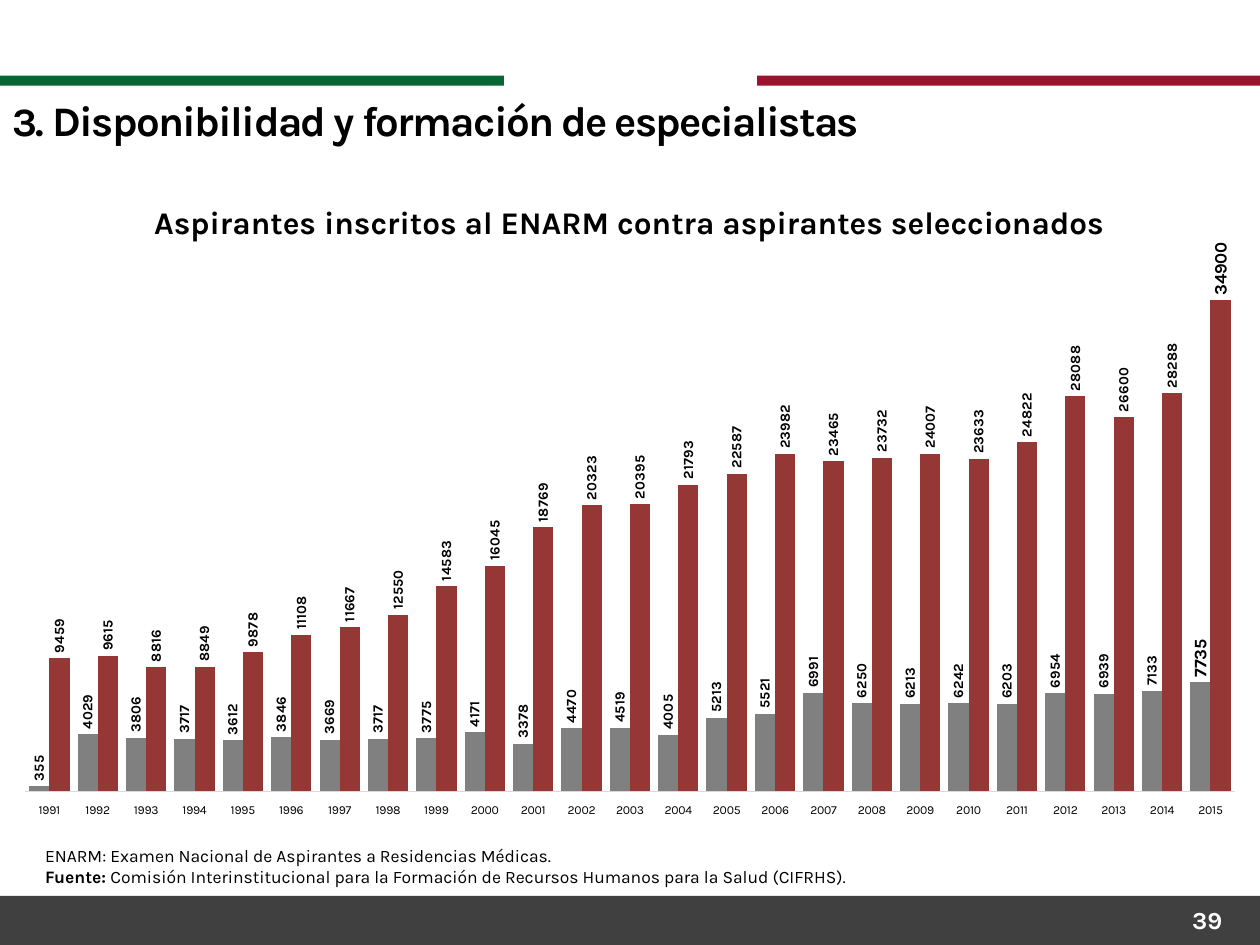
from lxml.etree import SubElement
from pptx import Presentation
from pptx.chart.data import CategoryChartData
from pptx.dml.color import RGBColor
from pptx.enum.chart import XL_CHART_TYPE, XL_LABEL_POSITION, XL_TICK_LABEL_POSITION, XL_TICK_MARK
from pptx.enum.shapes import MSO_SHAPE
from pptx.enum.text import MSO_ANCHOR, PP_ALIGN
from pptx.oxml.ns import qn
from pptx.util import Inches, Pt

BLACK = RGBColor(0x00, 0x00, 0x00)
WHITE = RGBColor(0xFF, 0xFF, 0xFF)
FOOTER_GRAY = RGBColor(0x40, 0x40, 0x40)
GREEN = RGBColor(0x07, 0x66, 0x32)
CRIMSON = RGBColor(0x9B, 0x12, 0x2D)
BAR_GRAY = RGBColor(0x80, 0x80, 0x80)
BAR_RED = RGBColor(0x95, 0x37, 0x35)
AXIS_GRAY = RGBColor(0xD9, 0xD9, 0xD9)

COLUMNS, ROWS = 100, 75
YEARS = range(1991, 2016)
SELECTED = [355, 4029, 3806, 3717, 3612, 3846, 3669, 3717, 3775, 4171, 3378, 4470, 4519,
            4005, 5213, 5521, 6991, 6250, 6213, 6242, 6203, 6954, 6939, 7133, 7735]
REGISTERED = [9459, 9615, 8816, 8849, 9878, 11108, 11667, 12550, 14583, 16045, 18769,
              20323, 20395, 21793, 22587, 23982, 23465, 23732, 24007, 23633, 24822,
              28088, 26600, 28288, 34900]


def set_attributes(obj, values):
    for name, value in values.items():
        setattr(obj, name, value)


class SlideBuilder:
    """Draws on one slide; places are (column, row, columns, rows) of the grid."""

    font_name = "Karla"

    def __init__(self, prs):
        self.slide = prs.slides.add_slide(prs.slide_layouts[6])
        self.column = prs.slide_width / COLUMNS
        self.row = prs.slide_height / ROWS

    def place(self, x, y, w, h):
        return (int(x * self.column), int(y * self.row),
                int(w * self.column), int(h * self.row))

    def style(self, font, size, bold=False, color=BLACK):
        set_attributes(font, {"name": self.font_name, "size": Pt(size), "bold": bold})
        font.color.rgb = color

    def bar(self, at, color):
        sp = self.slide.shapes.add_shape(MSO_SHAPE.RECTANGLE, *self.place(*at))
        sp.shadow.inherit = False
        sp.fill.solid()
        sp.fill.fore_color.rgb = color
        sp.line.fill.background()

    def text(self, at, paragraphs, align=PP_ALIGN.LEFT, color=BLACK, tracking=None):
        """Each paragraph is a list of (text, size, bold) runs."""
        tf = self.slide.shapes.add_textbox(*self.place(*at)).text_frame
        set_attributes(tf, {"word_wrap": True, "vertical_anchor": MSO_ANCHOR.TOP})
        for i, runs in enumerate(paragraphs):
            p = tf.paragraphs[0] if i == 0 else tf.add_paragraph()
            p.alignment = align
            for words, size, bold in runs:
                r = p.add_run()
                r.text = words
                self.style(r.font, size, bold, color)
                if tracking is not None:
                    r.font._element.set("spc", str(tracking))

    def column_chart(self, at, categories, series):
        """Each series is (name, values, color); the last point has a larger label."""
        data = CategoryChartData()
        data.categories = [str(c) for c in categories]
        for name, values, _ in series:
            data.add_series(name, values)
        chart = self.slide.shapes.add_chart(
            XL_CHART_TYPE.COLUMN_CLUSTERED, *self.place(*at), data).chart
        set_attributes(chart, {"has_legend": False, "has_title": False})
        self.style(chart.font, 8)

        plot = chart.plots[0]
        set_attributes(plot, {"gap_width": 40, "overlap": 0, "vary_by_categories": False})
        for ser, (_, values, color) in zip(plot.series, series):
            ser.format.fill.solid()
            ser.format.fill.fore_color.rgb = color
            labels = ser.data_labels
            last = ser.points[len(values) - 1].data_label
            self.style(last.font, 10, True)
            self.style(labels.font, 8, True)
            labels.show_value = True
            labels.position = last.position = XL_LABEL_POSITION.OUTSIDE_END
        for body in chart._chartSpace.xpath(".//c:dLbls//a:bodyPr"):
            body.set("rot", "-5400000")
            body.set("vert", "horz")

        self.chart_axes(chart)
        self.plot_layout(chart, {"x": 0.02, "y": 0.02, "w": 0.96, "h": 0.93})

    def chart_axes(self, chart):
        set_attributes(chart.value_axis, {
            "visible": False, "has_major_gridlines": False,
            "minimum_scale": 0, "maximum_scale": 40000})
        axis = chart.category_axis
        set_attributes(axis, {
            "major_tick_mark": XL_TICK_MARK.NONE, "minor_tick_mark": XL_TICK_MARK.NONE,
            "tick_label_position": XL_TICK_LABEL_POSITION.LOW})
        self.style(axis.tick_labels.font, 7)
        axis.format.line.color.rgb = AXIS_GRAY
        axis.format.line.width = Pt(0.75)

    def plot_layout(self, chart, shares):
        """Fix the inner plot area, given as shares of the chart."""
        area = chart._chartSpace.chart.plotArea
        for old in area.findall(qn("c:layout")):
            area.remove(old)
        layout = SubElement(area, qn("c:layout"))
        area.insert(0, layout)
        manual = SubElement(layout, qn("c:manualLayout"))
        settings = {"layoutTarget": "inner", "xMode": "edge", "yMode": "edge", **shares}
        for tag, value in settings.items():
            SubElement(manual, qn(f"c:{tag}")).set("val", str(value))


def main():
    prs = Presentation()
    prs.slide_width, prs.slide_height = Inches(10), Inches(7.5)
    s = SlideBuilder(prs)

    s.bar((0, 71.1, 100, 3.9), FOOTER_GRAY)
    s.bar((0, 6, 40, 0.8), GREEN)
    s.bar((60.1, 6, 39.9, 0.8), CRIMSON)

    s.column_chart((0, 17.2, 100, 48), YEARS, [
        ("Series 1", SELECTED, BAR_GRAY), ("Series 2", REGISTERED, BAR_RED)])

    s.text((2.6, 15.6, 94.7, 4),
           [[("Aspirantes inscritos al ENARM contra aspirantes seleccionados", 18, True)]],
           PP_ALIGN.CENTER)
    s.text((2.6, 66.6, 94.6, 4.5), [
        [("ENARM: Examen Nacional de Aspirantes a Residencias Médicas.", 10, False)],
        [("Fuente: ", 10, True),
         ("Comisión Interinstitucional para la Formación de Recursos Humanos "
          "para la Salud (CIFRHS).", 10, False)]])
    s.text((74.7, 71.3, 23.3, 4), [[("39", 14, True)]], PP_ALIGN.RIGHT, WHITE)
    s.text((0, 7, 100, 4.7),
           [[("3. ", 23, True), ("Disponibilidad y formación de especialistas", 24, True)]],
           tracking=-100)

    prs.save("out.pptx")


if __name__ == "__main__":
    main()
